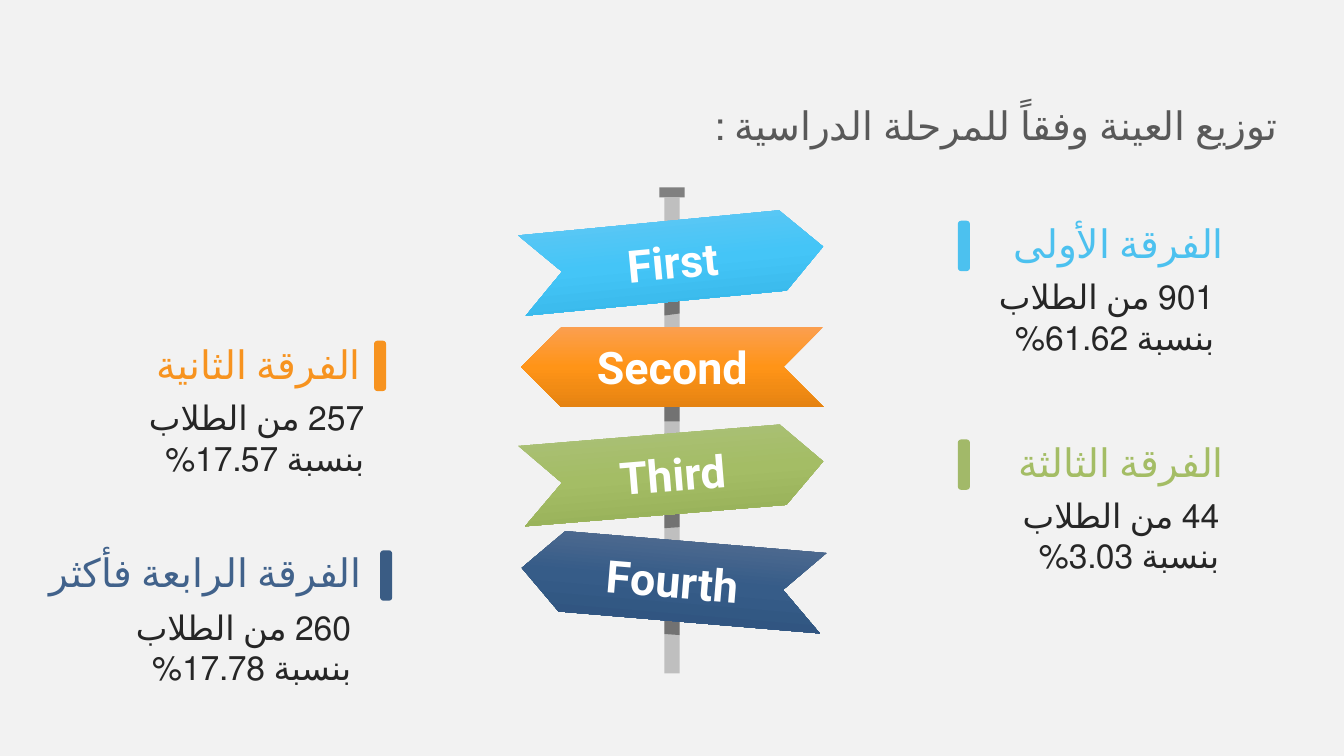
from dataclasses import dataclass

import lxml.etree
import pptx
import pptx.dml.color
import pptx.enum.lang
import pptx.enum.shapes
import pptx.enum.text
import pptx.oxml
import pptx.oxml.ns
import pptx.util

Inches = pptx.util.Inches
Pt = pptx.util.Pt
Preset = pptx.enum.shapes.MSO_SHAPE
Anchor = pptx.enum.text.MSO_ANCHOR
Align = pptx.enum.text.PP_ALIGN
qn = pptx.oxml.ns.qn


@dataclass(frozen=True)
class Theme:
    background: str = "F2F2F2"
    title: str = "595959"
    body: str = "262626"
    post: str = "BFBFBF"
    cap: str = "808080"
    shade: str = "000000"
    shade_alpha: int = 40
    sign_text: str = "FFFFFF"
    heading_font: str = "Lato"
    body_font: str = "Calibri"
    sign_font: str = "Roboto"
    heading_size: int = 28
    body_size: int = 24
    sign_size: int = 32


@dataclass(frozen=True)
class Sign:
    label: str
    top: float
    rotation: float
    points_left: bool
    gradient: tuple[str, str, str]
    shade_left: float
    shade_right: float


@dataclass(frozen=True)
class Group:
    heading: str
    lines: tuple[str, str]
    color: str
    bar_color: str
    bar: tuple[float, float]
    heading_box: tuple[float, float, float]
    body_at: tuple[float, float]


THEME = Theme()
POST_LEFT, POST_WIDTH = 6.59, 0.15
SIGN_LEFT, SIGN_WIDTH, SIGN_HEIGHT = 5.17, 3, 0.8
TITLE = "توزيع العينة وفقاً للمرحلة الدراسية :"

SIGNS = [
    Sign("First", 2.19, 354.5, False, ("67C8F3", "44C5F7", "33B3E5"), 2.33, 2.31),
    Sign("Second", 3.24, 0, True, ("FB9F50", "FF9417", "E58312"), 3.38, 3.38),
    Sign("Third", 4.3, 355.3, False, ("ACC17C", "A4BD65", "93AD55"), 4.44, 4.43),
    Sign("Fourth", 5.36, 4.8, True, ("5A7193", "365C88", "2D517C"), 5.49, 5.5),
]

GROUPS = [
    Group("الفرقة الأولى", ("901 من الطلاب", "بنسبة 61.62%"), "4CC1EF", "4CC1EF",
          (9.5, 2.19), (9.76, 2.12, 2.38), (9.65, 2.69)),
    Group("الفرقة الثالثة", ("44 من الطلاب", "بنسبة 3.03%"), "A4BD65", "A2B969",
          (9.5, 4.36), (9.76, 4.29, 2.38), (9.7, 4.86)),
    Group("الفرقة الرابعة فأكثر", ("260 من الطلاب", "بنسبة 17.78%"), "41628B", "3A5C84",
          (3.77, 5.46), (0.38, 5.39, 3.21), (1.09, 5.97)),
    Group("الفرقة الثانية", ("257 من الطلاب", "بنسبة 17.57%"), "F7931F", "F7931F",
          (3.71, 3.38), (0.37, 3.32, 3.21), (1.22, 3.89)),
]


def rgb(color: str) -> pptx.dml.color.RGBColor:
    return pptx.dml.color.RGBColor.from_string(color)


def finish(shape, color: str) -> None:
    """Give a shape a plain fill with neither line nor shadow."""
    shape.shadow.inherit = False
    shape.line.fill.background()
    shape.fill.solid()
    shape.fill.fore_color.rgb = rgb(color)


def format_runs(paragraph, font: str, size: int, color: str, bold: bool = False) -> None:
    for run in paragraph.runs:
        run.font.name = font
        run.font.size = Pt(size)
        run.font.bold = bold
        run.font.color.rgb = rgb(color)


def format_arabic(text_frame, font: str, size: int, color: str) -> None:
    text_frame.word_wrap = True
    for paragraph in text_frame.paragraphs:
        paragraph.alignment = Align.RIGHT
        paragraph._p.get_or_add_pPr().set("rtl", "1")
        format_runs(paragraph, font, size, color)
        for run in paragraph.runs:
            run.font.language_id = pptx.enum.lang.MSO_LANGUAGE_ID.ARABIC_EGYPT


def add_box(slide, preset, left: float, top: float, width: float, height: float, color: str):
    shape = slide.shapes.add_shape(
        preset, Inches(left), Inches(top), Inches(width), Inches(height))
    finish(shape, color)
    return shape


def add_title(slide) -> None:
    title = slide.shapes.title
    title.left, title.top = Inches(6.28), Inches(0.95)
    title.width, title.height = Inches(6.49), Inches(0.57)
    title.text_frame.text = TITLE
    title.text_frame.vertical_anchor = Anchor.TOP
    title.text_frame.auto_size = pptx.enum.text.MSO_AUTO_SIZE.NONE
    format_arabic(title.text_frame, THEME.heading_font, THEME.heading_size, THEME.title)


def add_shade(slide, sign: Sign) -> None:
    """Draw the translucent shade that a sign casts on the post."""
    right = POST_LEFT + POST_WIDTH
    corners = [(right, sign.shade_right), (right, sign.shade_right + SIGN_HEIGHT),
               (POST_LEFT, sign.shade_left + SIGN_HEIGHT), (POST_LEFT, sign.shade_left)]
    points = [(Inches(x), Inches(y)) for x, y in corners]
    builder = slide.shapes.build_freeform(*points[0])
    builder.add_line_segments(points[1:], close=True)
    shade = builder.convert_to_shape()
    finish(shade, THEME.shade)
    color = shade._element.spPr.find(qn("a:solidFill"))[0]
    alpha = lxml.etree.SubElement(color, qn("a:alpha"))
    alpha.set("val", str(THEME.shade_alpha * 1000))


def set_gradient(shape, colors: tuple[str, str, str]) -> None:
    """Fill a shape from top to bottom with three evenly spaced colours."""
    shape.fill.gradient()
    shape.fill.gradient_angle = 270
    stops = shape._element.spPr.find(qn("a:gradFill")).find(qn("a:gsLst"))
    for stop in list(stops):
        stops.remove(stop)
    for index, color in enumerate(colors):
        stop = lxml.etree.SubElement(stops, qn("a:gs"), pos=str(index * 50000))
        lxml.etree.SubElement(stop, qn("a:srgbClr"), val=color)


def add_sign(slide, sign: Sign) -> None:
    shape = add_box(slide, Preset.NOTCHED_RIGHT_ARROW, SIGN_LEFT, sign.top,
                    SIGN_WIDTH, SIGN_HEIGHT, sign.gradient[1])
    set_gradient(shape, sign.gradient)
    shape.adjustments[0], shape.adjustments[1] = 1, 0.5
    shape.rotation = sign.rotation
    if sign.points_left:
        shape._element.spPr.find(qn("a:xfrm")).set("flipH", "1")
    frame = shape.text_frame
    frame.text = sign.label
    frame.vertical_anchor = Anchor.MIDDLE
    frame.margin_left = frame.margin_right = Inches(0.05)
    paragraph = frame.paragraphs[0]
    paragraph.alignment = Align.CENTER
    format_runs(paragraph, THEME.sign_font, THEME.sign_size, THEME.sign_text, bold=True)


def add_group(slide, group: Group) -> None:
    left, top, width = group.heading_box
    heading = slide.shapes.add_textbox(
        Inches(left), Inches(top), Inches(width), Inches(0.57)).text_frame
    heading.text = group.heading
    heading.vertical_anchor = Anchor.BOTTOM
    heading.margin_left = heading.margin_right = 0
    heading.paragraphs[0].space_after = Pt(3)
    format_arabic(heading, THEME.heading_font, THEME.heading_size, group.color)

    bar = add_box(slide, Preset.ROUNDED_RECTANGLE, *group.bar, 0.12, 0.5, group.bar_color)
    bar.adjustments[0] = 0.28

    left, top = group.body_at
    body = slide.shapes.add_textbox(
        Inches(left), Inches(top), Inches(2.49), Inches(0.91)).text_frame
    body.text = "\n".join(group.lines)
    format_arabic(body, THEME.body_font, THEME.body_size, THEME.body)


def main() -> None:
    presentation = pptx.Presentation()
    presentation.slide_width, presentation.slide_height = Inches(13.33), Inches(7.5)
    slide = presentation.slides.add_slide(presentation.slide_layouts[5])
    slide.background.fill.solid()
    slide.background.fill.fore_color.rgb = rgb(THEME.background)
    add_title(slide)
    add_box(slide, Preset.RECTANGLE, POST_LEFT, 1.96, POST_WIDTH, 4.72, THEME.post)
    add_box(slide, Preset.RECTANGLE, 6.54, 1.86, 0.25, 0.1, THEME.cap)
    for sign in SIGNS:
        add_shade(slide, sign)
    for sign in SIGNS:
        add_sign(slide, sign)
    for group in GROUPS:
        add_group(slide, group)
    presentation.save("out.pptx")


if __name__ == "__main__":
    main()
